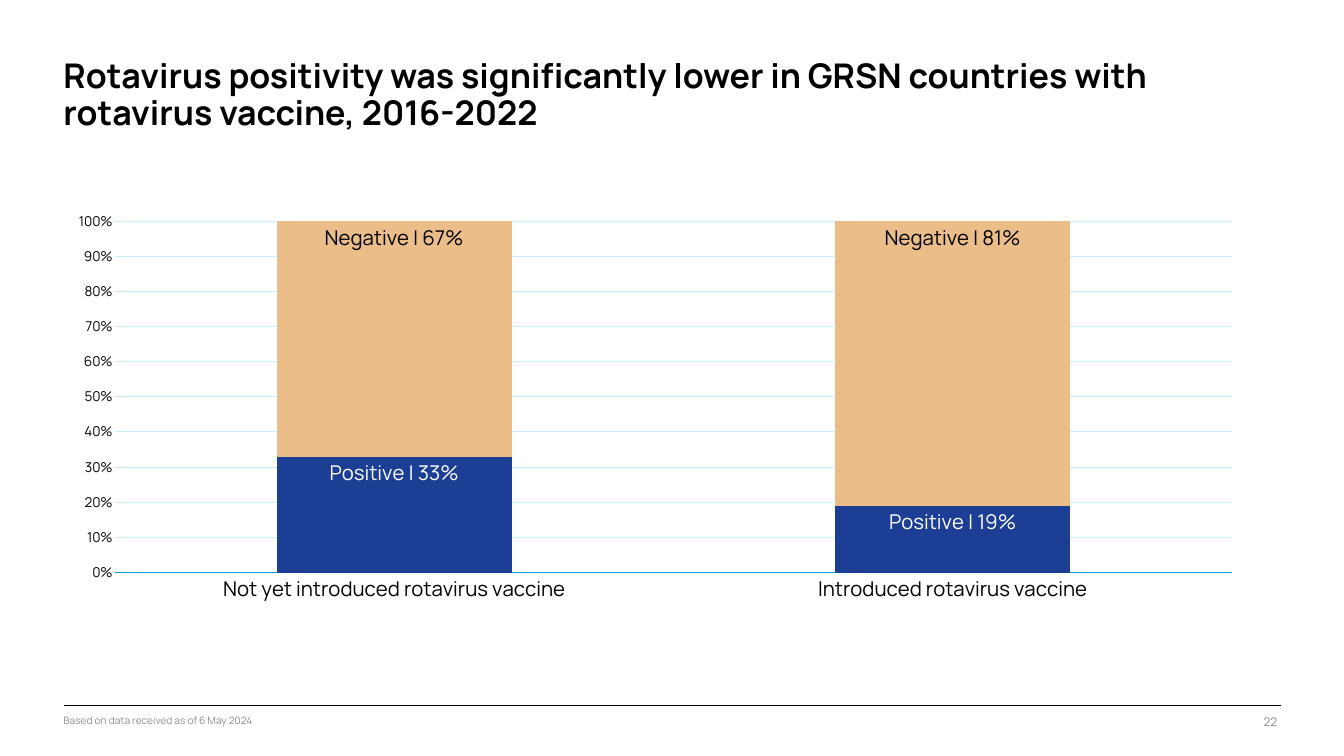
from dataclasses import dataclass

from lxml.etree import SubElement
from pptx import Presentation
from pptx.chart.data import CategoryChartData
from pptx.dml.color import RGBColor
from pptx.enum.chart import XL_AXIS_CROSSES as Crosses
from pptx.enum.chart import XL_CHART_TYPE as ChartType
from pptx.enum.chart import XL_LABEL_POSITION as LabelPosition
from pptx.enum.chart import XL_TICK_MARK as TickMark
from pptx.enum.shapes import MSO_CONNECTOR as Connector
from pptx.enum.text import MSO_AUTO_SIZE as AutoSize
from pptx.enum.text import PP_ALIGN as Align
from pptx.oxml import parse_xml
from pptx.oxml.ns import nsdecls, qn
from pptx.util import Cm, Pt

FONT = "Manrope"
COLORS = {
    "text": "000000",
    "muted": "8C8C8C",
    "white": "FFFFFF",
    "axis": "009CDE",
    "grid": "C5EEFF",
    "positive": "1C3E94",
    "negative": "EABD89",
}
LEFT = 2.64
RULE_RIGHT, RULE_TOP = 53.24, 29.31
FOOTER_TOP = 29.69


@dataclass
class Result:
    name: str
    shares: tuple[float, ...]
    fill: str
    label: str


CATEGORIES = ("Not yet introduced rotavirus vaccine", "Introduced rotavirus vaccine")
RESULTS = (
    Result("Positive", (0.33, 0.19), "positive", "white"),
    Result("Negative", (0.67, 0.81), "negative", "text"),
)


def color(name: str) -> RGBColor:
    return RGBColor.from_string(COLORS[name])


def set_font(font, size: float, ink: str, bold: bool = False) -> None:
    font.name, font.size, font.bold = FONT, Pt(size), bold
    font.color.rgb = color(ink)


def set_line(line, ink: str, width: float) -> None:
    line.color.rgb = color(ink)
    line.width = Pt(width)


def add_text(page, text: str, *, left: float, top: float, width: float, height: float,
             size: float, ink: str = "muted", bold: bool = False,
             align: Align = Align.LEFT, spacing: float = 1.0) -> None:
    box = page.shapes.add_textbox(Cm(left), Cm(top), Cm(width), Cm(height))
    frame = box.text_frame
    frame.margin_left = frame.margin_right = frame.margin_top = frame.margin_bottom = 0
    frame.word_wrap = True
    frame.auto_size = AutoSize.SHAPE_TO_FIT_TEXT
    para = frame.paragraphs[0]
    para.alignment, para.line_spacing = align, spacing
    span = para.add_run()
    span.text = text
    set_font(span.font, size, ink, bold)


def place_plot(chart, **fractions: float) -> None:
    """Fix the inner plot area as fractions of the chart frame."""
    area = chart.element.find(".//" + qn("c:plotArea"))
    for old in area.findall(qn("c:layout")):
        area.remove(old)
    layout = parse_xml(f"<c:layout {nsdecls('c')}/>")
    manual = SubElement(layout, qn("c:manualLayout"))
    settings = {"layoutTarget": "inner", "xMode": "edge", "yMode": "edge", **fractions}
    for tag, value in settings.items():
        SubElement(manual, qn(f"c:{tag}")).set("val", str(value))
    area.insert(0, layout)


def style_series(series, result: Result) -> None:
    series.format.fill.solid()
    series.format.fill.fore_color.rgb = color(result.fill)
    set_line(series.format.line, result.fill, 0.75)
    labels = series.data_labels
    labels.show_value = labels.show_series_name = True
    labels.number_format, labels.number_format_is_linked = "0%", False
    labels.position = LabelPosition.INSIDE_END
    set_font(labels.font, 24, result.label)
    separator = parse_xml(f"<c:separator {nsdecls('c')}> | </c:separator>")
    dlbls = series._element.find(qn("c:dLbls"))
    dlbls.find(qn("c:showBubbleSize")).addnext(separator)


def add_positivity_chart(page) -> None:
    data = CategoryChartData(number_format="0%")
    data.categories = CATEGORIES
    for result in RESULTS:
        data.add_series(result.name, result.shares)
    chart = page.shapes.add_chart(ChartType.COLUMN_STACKED_100, Cm(LEFT), Cm(6.96),
                                  Cm(50.85), Cm(20.88), data).chart
    chart.has_title = chart.has_legend = False
    set_font(chart.font, 16, "text")
    place_plot(chart, x=0.042, y=0.107, w=0.913, h=0.699)

    plot = chart.plots[0]
    plot.gap_width, plot.overlap, plot.vary_by_categories = 139, 100, False
    for series, result in zip(plot.series, RESULTS):
        style_series(series, result)

    # Axes, with the percentages on the right
    groups, percent = chart.category_axis, chart.value_axis
    for axis in (groups, percent):
        axis.major_tick_mark = axis.minor_tick_mark = TickMark.NONE
    groups.crosses = Crosses.MAXIMUM
    set_font(groups.tick_labels.font, 24, "text")
    set_line(groups.format.line, "axis", 0.75)
    percent.minimum_scale, percent.maximum_scale, percent.major_unit = 0, 1, 0.1
    percent.tick_labels.number_format = "0%"
    percent.tick_labels.number_format_is_linked = False
    set_font(percent.tick_labels.font, 16, "text")
    percent.format.line.fill.background()
    percent.has_major_gridlines = True
    set_line(percent.major_gridlines.format.line, "grid", 1)


def add_footer(page) -> None:
    rule = page.shapes.add_connector(Connector.STRAIGHT, Cm(LEFT), Cm(RULE_TOP),
                                     Cm(RULE_RIGHT), Cm(RULE_TOP))
    set_line(rule.line, "text", 0.75)
    SubElement(rule._element.spPr, qn("a:effectLst"))
    add_text(page, "Based on data received as of 6 May 2024", left=LEFT, top=FOOTER_TOP,
             width=48.16, height=0.51, size=12)
    add_text(page, "22", left=48.97, top=FOOTER_TOP, width=4.11, height=0.61,
             size=14, align=Align.RIGHT)


def main() -> None:
    deck = Presentation()
    deck.slide_width, deck.slide_height = Cm(55.86), Cm(31.42)
    page = deck.slides.add_slide(deck.slide_layouts[6])

    # Title
    add_text(page, "Rotavirus positivity was significantly lower in GRSN countries "
             "with rotavirus vaccine, 2016-2022", left=LEFT, top=2.46, width=49.05,
             height=3.1, size=40, ink="text", bold=True, spacing=0.9)
    add_positivity_chart(page)
    add_footer(page)
    deck.save("out.pptx")


if __name__ == "__main__":
    main()
